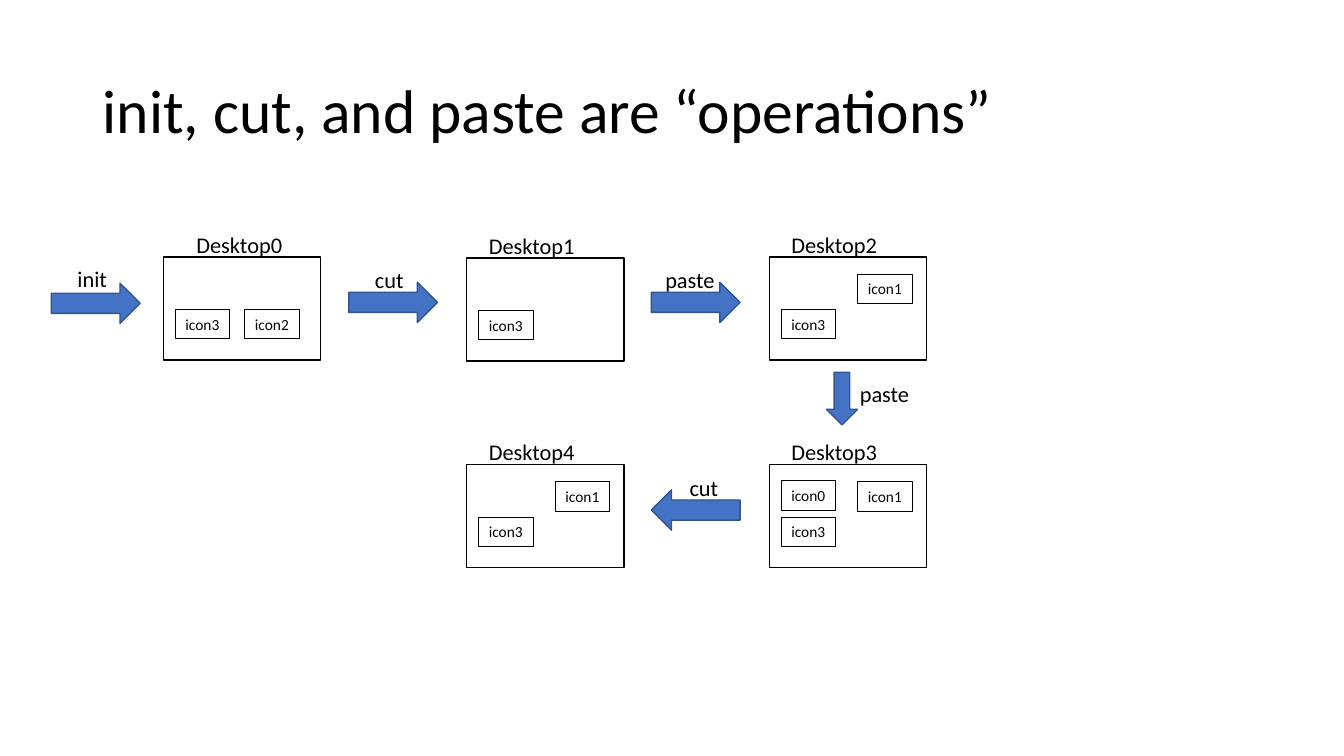
from pptx import Presentation
from pptx.dml.color import RGBColor
from pptx.enum.shapes import MSO_SHAPE as SHAPE
from pptx.enum.text import MSO_ANCHOR as ANCHOR, MSO_AUTO_SIZE as AUTO, PP_ALIGN as ALIGN
from pptx.util import Inches, Pt

COLS, ROWS = 133.3, 75


def rgb(value):
    return RGBColor.from_string(value)


class Board:
    """Draws styled elements on one slide, in columns and rows of a grid."""

    font, ink, blue, edge = "Calibri", "000000", "4472C4", "325491"

    def __init__(self, prs):
        self.s = prs.slides.add_slide(prs.slide_layouts[6])
        self.col = prs.slide_width / COLS
        self.row = prs.slide_height / ROWS

    def box(self, x, y, w, h):
        return (round(x * self.col), round(y * self.row),
                round(w * self.col), round(h * self.row))

    def set_text(self, sp, text, size):
        tf = sp.text_frame
        tf.text = text
        tf.word_wrap = False
        tf.auto_size = AUTO.SHAPE_TO_FIT_TEXT
        p = tf.paragraphs[0]
        p.alignment = ALIGN.LEFT
        font = p.runs[0].font
        font.name, font.size = self.font, Pt(size)
        font.color.rgb = rgb(self.ink)
        return tf

    def label(self, text, x, y, w, h=3.7, size=16):
        sp = self.s.shapes.add_textbox(*self.box(x, y, w, h))
        return self.set_text(sp, text, size)

    def title(self, text):
        tf = self.label(text, 9.2, 4, 115, 14.5, 44)
        tf.word_wrap, tf.auto_size = True, AUTO.NONE
        tf.vertical_anchor = ANCHOR.MIDDLE
        tf.paragraphs[0].line_spacing = 0.9

    def shape(self, kind, x, y, w, h, line, weight, fill=None):
        sp = self.s.shapes.add_shape(kind, *self.box(x, y, w, h))
        sp.shadow.inherit = False
        sp.line.color.rgb, sp.line.width = rgb(line), Pt(weight)
        if fill:
            sp.fill.solid()
            sp.fill.fore_color.rgb = rgb(fill)
        else:
            sp.fill.background()
        return sp

    def icon(self, text, x, y):
        sp = self.shape(SHAPE.RECTANGLE, x, y, 5.4, 2.9, self.ink, 0.75)
        self.set_text(sp, text, 11)

    def desktop(self, name, x, y, indent, icons):
        self.shape(SHAPE.RECTANGLE, x, y, 15.6, 10.2, self.ink, 1)
        self.label(name, x + indent, y - 3.1, 10.6)
        for text, dx, dy in icons:
            self.icon(text, x + dx, y + dy)

    def operation(self, name, x, y, dx, dy, width, w=8.8, h=4, turn=0):
        sp = self.shape(SHAPE.RIGHT_ARROW, x, y, w, h, self.edge, 1, self.blue)
        sp.rotation = turn
        self.label(name, x + dx, y + dy, width)


LEFT, RIGHT, HIGH, LOW = 1.2, 8.8, 1.7, 5.2
X0, X1, X2 = 16.2, 46.3, 76.3
TOP, BOTTOM = 25.5, 46.1
ICON3 = ("icon3", LEFT, LOW)
ICON1 = ("icon1", RIGHT, HIGH)

DESKTOPS = [
    ("Desktop0", X0, TOP, 2.3, [ICON3, ("icon2", 8.1, LOW)]),
    ("Desktop1", X1, TOP + 0.1, LEFT, [ICON3]),
    ("Desktop2", X2, TOP, LEFT, [ICON3, ICON1]),
    ("Desktop3", X2, BOTTOM, LEFT, [ICON3, ICON1, ("icon0", LEFT, 1.6)]),
    ("Desktop4", X1, BOTTOM, LEFT, [ICON3, ICON1]),
]
OPERATIONS = [
    ("init", 5.1, 28.1, 1.6, -2.3, 5),
    ("cut", 34.6, 28, 1.6, -2.1, 4.9),
    ("paste", 64.6, 28, 0.4, -2.1, 7),
    ("paste", 80.9, 38, 3.4, -0.8, 7, 5.2, 3.1, 90),
    ("cut", 64.6, 48.6, 2.8, -2.1, 4.9, 8.8, 4, 180),
]


def main():
    prs = Presentation()
    prs.slide_width, prs.slide_height = Inches(13.33), Inches(7.5)
    board = Board(prs)
    board.title("init, cut, and paste are “operations”")
    for desktop in DESKTOPS:
        board.desktop(*desktop)
    for operation in OPERATIONS:
        board.operation(*operation)
    prs.save("out.pptx")


if __name__ == "__main__":
    main()
